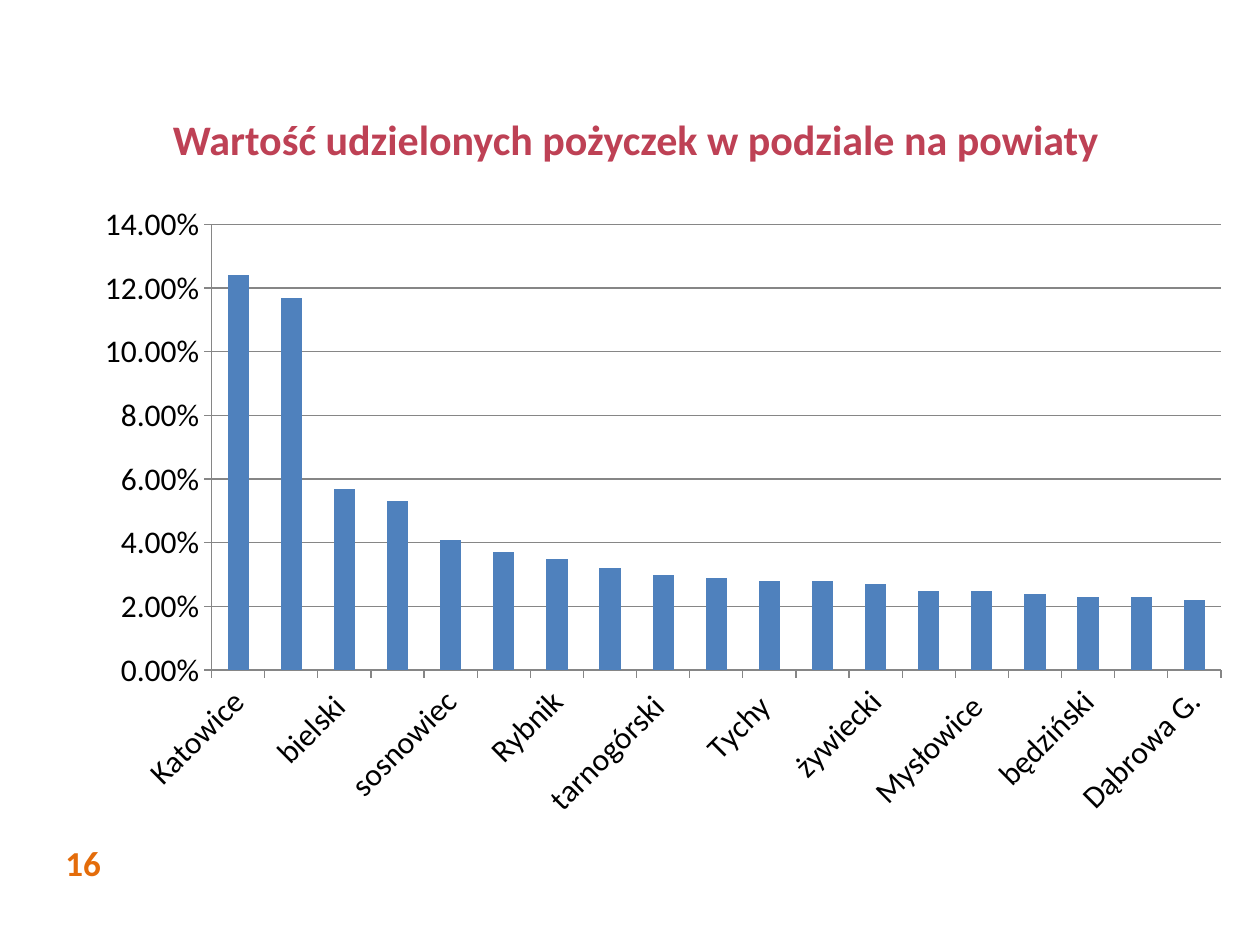
from lxml import etree
from pptx import Presentation
from pptx.chart.data import CategoryChartData
from pptx.dml.color import RGBColor
from pptx.enum.chart import XL_CHART_TYPE as ChartType, XL_TICK_MARK as Tick
from pptx.enum.text import MSO_ANCHOR as Anchor, PP_ALIGN as Align
from pptx.oxml import parse_xml
from pptx.oxml.ns import nsdecls, qn
from pptx.util import Pt

TITLE = "Wartość udzielonych pożyczek w podziale na powiaty "
PAGE = "16"
LOANS = [
    ("Katowice", 0.124), ("Bielsko Biała", 0.117), ("bielski ", 0.057),
    ("Gliwice ", 0.053), ("sosnowiec", 0.041), ("cieszyński ", 0.037),
    ("Rybnik", 0.035), ("pszczynski", 0.032), ("tarnogórski ", 0.03),
    ("Bytom", 0.029), ("Tychy ", 0.028), ("Zabrze", 0.028),
    ("żywiecki", 0.027), ("Jastrzebie Z. ", 0.025), ("Mysłowice ", 0.025),
    ("mikołowski ", 0.024), ("będziński", 0.023), ("wodzisławski ", 0.023),
    ("Dąbrowa G.", 0.022),
]
COLORS = {"title": "BE4155", "page": "E46C0A", "bar": "4F81BD",
          "axis": "868686", "text": "000000"}
FONT = "Calibri"
TITLE_BOX = (60, 21, 612, 116)
PAGE_BOX = (29.5, 474, 36, 37.5)
CHART_BOX = (48, 110, 663, 364)
PLOT = {"x": 0.11, "y": 0.05, "w": 0.87, "h": 0.7}  # fractions of the chart


def rgb(name):
    return RGBColor.from_string(COLORS[name])


def place(sp, box):
    sp.left, sp.top, sp.width, sp.height = map(Pt, box)


def set_font(font, size, color, bold=False):
    font.name, font.size, font.bold = FONT, Pt(size), bold
    font.color.rgb = rgb(color)


def write(sp, text, size, color, bold=True):
    tf = sp.text_frame
    tf.word_wrap = True
    tf.vertical_anchor = Anchor.MIDDLE
    p = tf.paragraphs[0]
    p.alignment = Align.CENTER
    r = p.add_run()
    r.text = text
    set_font(r.font, size, color, bold)


def style_line(line):
    line.color.rgb = rgb("axis")
    line.width = Pt(0.75)


def fix_plot_area(chart):
    """Pin the inner plot area to the fractions in PLOT."""
    area = chart._chartSpace.chart.plotArea
    for old in area.findall(qn("c:layout")):
        area.remove(old)
    parts = "".join(f'<c:{k}Mode val="edge"/>' for k in "xy")
    parts += "".join(f'<c:{k} val="{v}"/>' for k, v in PLOT.items())
    area.insert(0, parse_xml(
        f'<c:layout {nsdecls("c")}><c:manualLayout>'
        f'<c:layoutTarget val="inner"/>{parts}</c:manualLayout></c:layout>'))


def thin_labels(axis, step, degrees):
    """Show every step-th category label, turned by degrees."""
    skip = etree.Element(qn("c:tickLblSkip"), val=str(step))
    axis._element.find(qn("c:noMultiLvlLbl")).addprevious(skip)
    body = axis._element.find(qn("c:txPr")).find(qn("a:bodyPr"))
    body.set("rot", str(degrees * 60000))


def add_loan_chart(slide):
    data = CategoryChartData(number_format="0.00%")
    names, values = zip(*LOANS)
    data.categories = names
    data.add_series("Series 1", values)
    chart = slide.shapes.add_chart(
        ChartType.COLUMN_CLUSTERED, *map(Pt, CHART_BOX), data).chart
    chart.has_legend = chart.has_title = False
    set_font(chart.font, 18, "text")

    plot = chart.plots[0]
    plot.gap_width = 150
    plot.vary_by_categories = False
    fill = plot.series[0].format.fill
    fill.solid()
    fill.fore_color.rgb = rgb("bar")

    cat, val = chart.category_axis, chart.value_axis
    for axis in (cat, val):
        axis.major_tick_mark = Tick.OUTSIDE
        axis.minor_tick_mark = Tick.NONE
        style_line(axis.format.line)
        set_font(axis.tick_labels.font, 18, "text")
    val.minimum_scale, val.maximum_scale, val.major_unit = 0, 0.14, 0.02
    val.tick_labels.number_format = "0.00%"
    val.tick_labels.number_format_is_linked = False
    style_line(val.major_gridlines.format.line)
    thin_labels(cat, 2, -45)
    fix_plot_area(chart)


def main():
    prs = Presentation()
    prs.slide_width, prs.slide_height = Pt(720), Pt(540)
    slide = prs.slides.add_slide(prs.slide_layouts[5])
    title = slide.shapes.title
    place(title, TITLE_BOX)
    write(title, TITLE, 24, "title")
    page = slide.shapes.add_textbox(*map(Pt, PAGE_BOX))
    write(page, PAGE, 20, "page")
    add_loan_chart(slide)
    prs.save("out.pptx")


if __name__ == "__main__":
    main()
